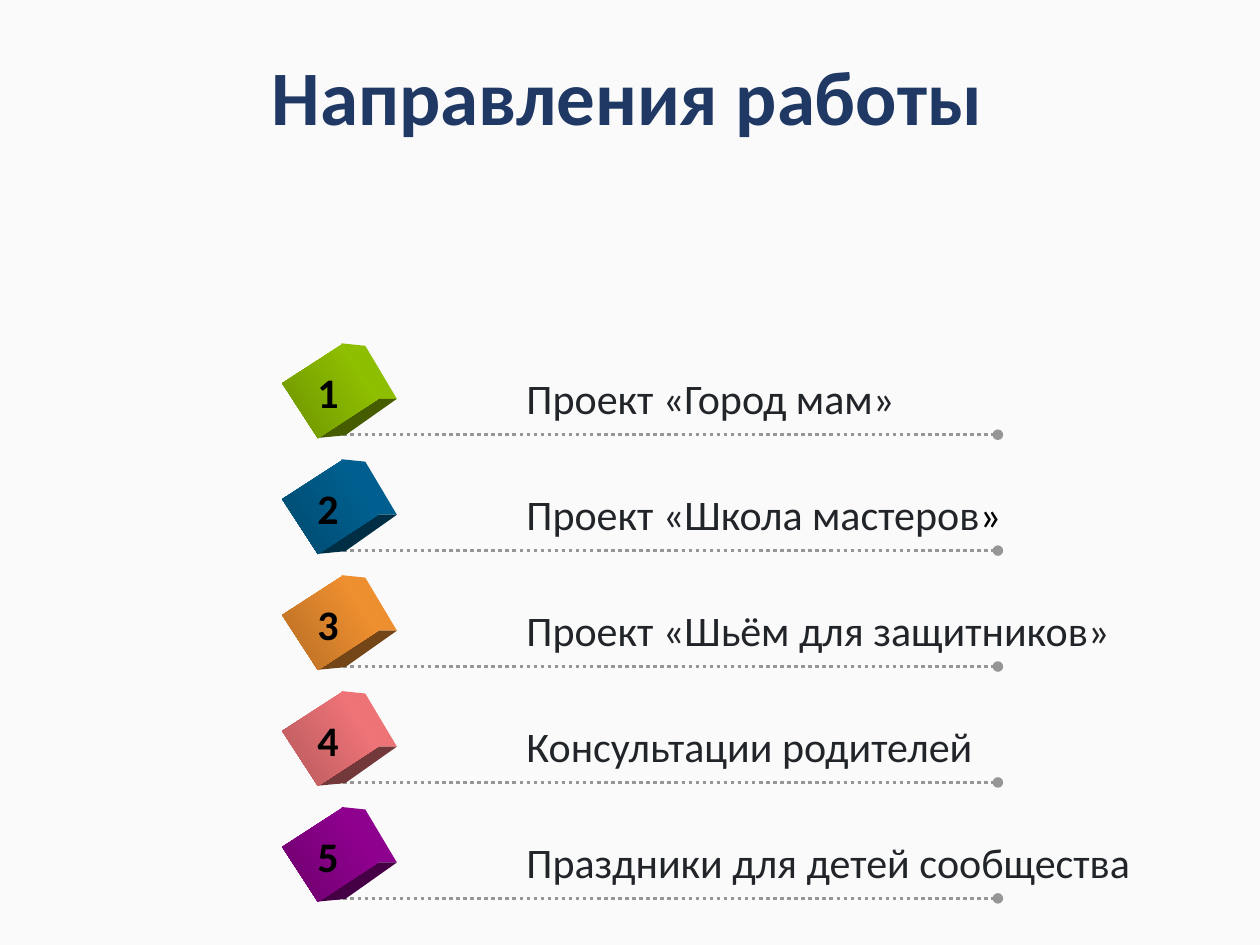
import pptx
import pptx.dml.color
import pptx.enum.dml
import pptx.enum.shapes
import pptx.enum.text
import pptx.oxml
import pptx.oxml.ns
import pptx.util
from lxml import etree

TITLE = "Направления работы"
# text runs as (words, colour name); front face light and dark colours
DIRECTIONS = [
    ([("Проект «Город мам»", "label")], 3.15, "99CC00", "6D9200"),
    ([("Проект «Школа мастеров", "label"), ("»", "black")], 3.97, "006699", "00496D"),
    ([("Проект «Шьём для защитников»", "label")], 4.84, "FF9933", "B66D24"),
    ([("Консультации родителей", "label")], 3.78, "FF7C80", "B6595C"),
    ([("Праздники для детей сообщества", "label")], 5.19, "990099", "6D006D"),
]
COLOURS = {"background": "FAFAFA", "title": "203864", "label": "212529",
           "black": "000000", "rule": "969696", "outline": "FFFFFF"}
FONT = "Calibri"
FIRST_RULE, ROW_STEP = 3.45, 0.92
RULE_LEFT, RULE_RIGHT = 2.67, 7.92
CUBE_LEFT, CUBE_WIDTH, CUBE_HEIGHT, CUBE_TURN = 2.36, 0.52, 0.57, 57
# cube faces as offsets from the centre of the front, with their brightness
CUBE_FACES = [
    ([(0.09, -0.38), (0.28, -0.36), (0.53, 0.06), (0.36, 0.06)], 0.93),
    ([(-0.09, 0.37), (0.36, 0.06), (0.53, 0.06), (0.12, 0.35)], 0.45),
]
Inches = pptx.util.Inches


def rgb(hex_colour):
    return pptx.dml.color.RGBColor.from_string(hex_colour)


def shade(hex_colour, share):
    channels = (int(hex_colour[i:i + 2], 16) for i in (0, 2, 4))
    return "".join(f"{round(value * share):02X}" for value in channels)


def add_title(page):
    box = page.shapes.title
    box.left, box.top, box.width, box.height = map(Inches, (0.67, 0.36, 8.62, 0.87))
    box.text_frame.vertical_anchor = pptx.enum.text.MSO_ANCHOR.MIDDLE
    para = box.text_frame.paragraphs[0]
    para.alignment = pptx.enum.text.PP_ALIGN.CENTER
    para.line_spacing = 0.9
    span = para.add_run()
    span.text = TITLE
    font = span.font
    font.name, font.size, font.bold = FONT, pptx.util.Pt(44), True
    font.color.rgb = rgb(COLOURS["title"])
    outline = pptx.oxml.parse_xml(
        f'<a:ln {pptx.oxml.ns.nsdecls("a")} w="{pptx.util.Pt(0.75)}"><a:solidFill>'
        f'<a:srgbClr val="{COLOURS["outline"]}"/></a:solidFill></a:ln>')
    span._r.get_or_add_rPr().insert(0, outline)


def add_rule(shapes, y):
    rule = shapes.add_connector(pptx.enum.shapes.MSO_CONNECTOR.STRAIGHT,
                                Inches(RULE_LEFT), Inches(y), Inches(RULE_RIGHT), Inches(y))
    rule.line.color.rgb = rgb(COLOURS["rule"])
    rule.line.width = pptx.util.Pt(2)
    rule.line.dash_style = pptx.enum.dml.MSO_LINE.ROUND_DOT
    tail = pptx.oxml.ns.qn("a:tailEnd")
    etree.SubElement(rule.line._get_or_add_ln(), tail, type="oval")
    etree.SubElement(rule._element.spPr, pptx.oxml.ns.qn("a:effectLst"))


def add_cube(shapes, top, light, dark):
    centre_x, centre_y = CUBE_LEFT + CUBE_WIDTH / 2, top + CUBE_HEIGHT / 2
    for offsets, brightness in CUBE_FACES:
        points = [(Inches(centre_x + x), Inches(centre_y + y)) for x, y in offsets]
        builder = shapes.build_freeform(*points[0])
        builder.add_line_segments(points[1:], close=True)
        face = builder.convert_to_shape()
        face.shadow.inherit = False
        face.fill.solid()
        face.fill.fore_color.rgb = rgb(shade(light, brightness))
        face.line.fill.background()
    front = shapes.add_shape(pptx.enum.shapes.MSO_SHAPE.RECTANGLE, Inches(CUBE_LEFT),
                             Inches(top), Inches(CUBE_WIDTH), Inches(CUBE_HEIGHT))
    front.rotation = CUBE_TURN
    front.shadow.inherit = False
    front.line.fill.background()
    front.fill.gradient()
    front.fill.gradient_angle = 270
    for stop, colour, position in zip(front.fill.gradient_stops, (light, dark), (0, 1)):
        stop.color.rgb = rgb(colour)
        stop.position = position


def add_text(shapes, left, top, width, runs, bold=False):
    box = shapes.add_textbox(Inches(left), Inches(top), Inches(width), Inches(0.51))
    frame = box.text_frame
    frame.word_wrap = False
    frame.auto_size = pptx.enum.text.MSO_AUTO_SIZE.SHAPE_TO_FIT_TEXT
    para = frame.paragraphs[0]
    para.font.name, para.font.size, para.font.bold = FONT, pptx.util.Pt(24), bold
    for words, colour in runs:
        span = para.add_run()
        span.text = words
        span.font.color.rgb = rgb(COLOURS[colour])


def main():
    deck = pptx.Presentation()
    deck.slide_width, deck.slide_height = Inches(10), Inches(7.5)
    page = deck.slides.add_slide(deck.slide_layouts[5])
    page.background.fill.solid()
    page.background.fill.fore_color.rgb = rgb(COLOURS["background"])
    add_title(page)
    for row, (runs, width, light, dark) in enumerate(DIRECTIONS):
        y = FIRST_RULE + row * ROW_STEP
        shapes = page.shapes.add_group_shape().shapes
        add_rule(shapes, y)
        add_cube(shapes, y - 0.63, light, dark)
        add_text(shapes, 4.08, y - 0.54, width, runs)
        add_text(shapes, 2.42, y - 0.59, 0.37, [(str(row + 1), "black")], bold=True)
    deck.save("out.pptx")


if __name__ == "__main__":
    main()
